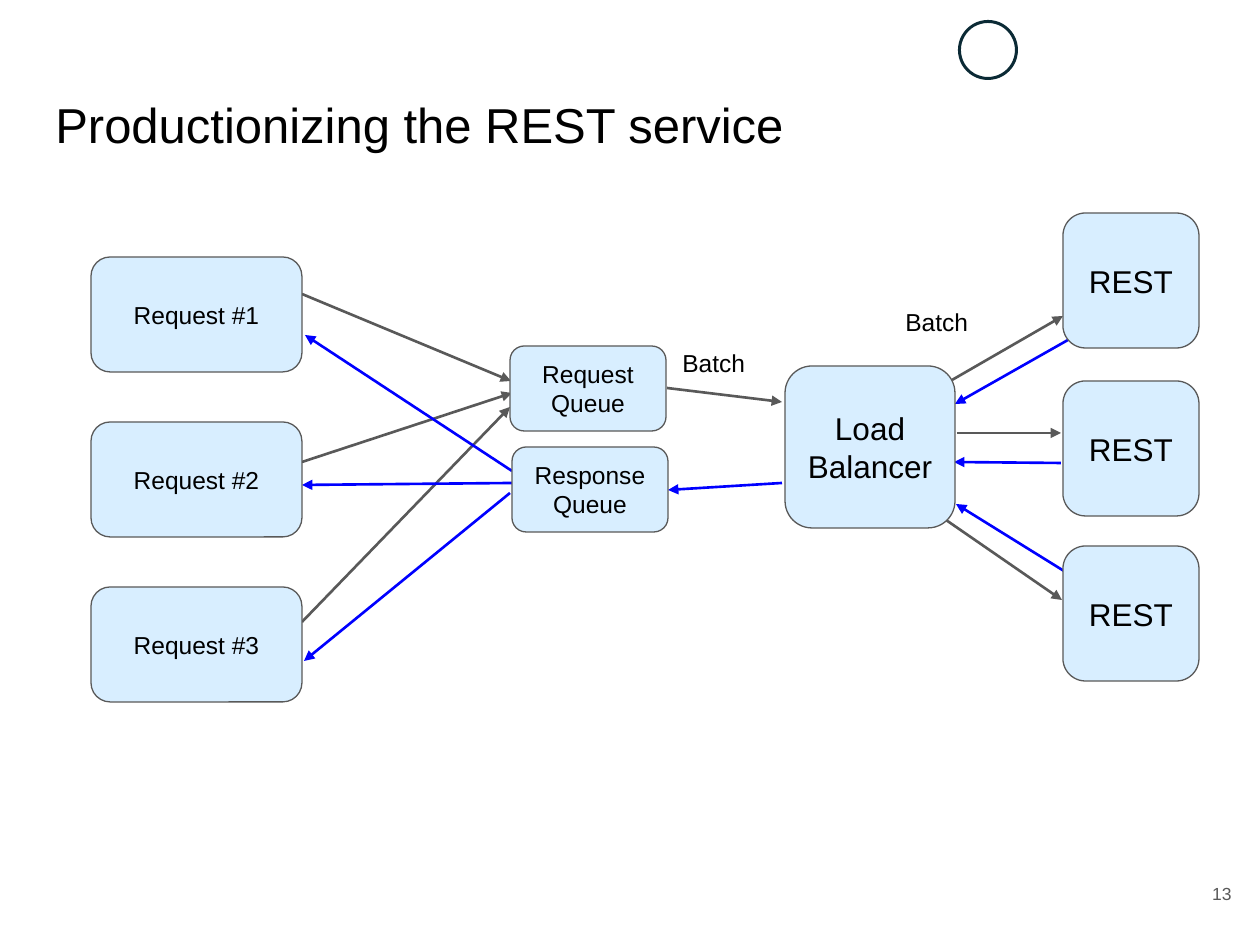
"""Build the slide about productionizing a REST service behind queues and a load balancer."""
import pptx
import pptx.dml.color
import pptx.enum.shapes
import pptx.enum.text
import pptx.oxml
import pptx.oxml.ns
import pptx.util
import lxml.etree

SCALE = 914400 / 126
COLORS = {"fill": "D8EEFF", "gray": "595959", "blue": "0000FF", "black": "000000", "mark": "0B2A35"}
SHAPES = pptx.enum.shapes.MSO_SHAPE
ALIGN = pptx.enum.text.PP_ALIGN
ANCHOR = pptx.enum.text.MSO_ANCHOR
qn = pptx.oxml.ns.qn


def emu(*lengths):
    return [pptx.util.Emu(round(length * SCALE)) for length in lengths]


def write(box, text, size=14, color="black", align=ALIGN.LEFT, anchor=ANCHOR.TOP):
    frame = box.text_frame
    frame.word_wrap = True
    frame.vertical_anchor = anchor
    frame.margin_left = frame.margin_right = pptx.util.Inches(0.1)
    frame.margin_top = frame.margin_bottom = pptx.util.Inches(0.1)
    para = frame.paragraphs[0]
    para.text = text
    para.alignment = align
    for span in para.runs:
        span.font.name = "Arial"
        span.font.size = pptx.util.Pt(size)
        span.font.color.rgb = pptx.dml.color.RGBColor.from_string(COLORS[color])
    for line_break in para._p.findall(qn("a:br")):
        lxml.etree.SubElement(line_break, qn("a:rPr"), sz=str(size * 100))


deck = pptx.Presentation()
deck.slide_width, deck.slide_height = emu(1260, 945)
page = deck.slides.add_slide(deck.slide_layouts[6])

emblem = page.shapes.add_shape(SHAPES.DONUT, *emu(958, 20, 60, 60))
emblem.adjustments[0] = 0.05
emblem.shadow.inherit = False
emblem.fill.solid()
emblem.fill.fore_color.rgb = pptx.dml.color.RGBColor.from_string(COLORS["mark"])
emblem.line.fill.background()

labels = [
    ("Productionizing the REST service", (43, 82, 1174, 105), {"size": 28}),
    ("13", (1168, 857, 76, 72),
     {"size": 10, "color": "gray", "align": ALIGN.RIGHT, "anchor": ANCHOR.MIDDLE}),
    ("Batch", (670, 335, 112, 52), {}),
    ("Batch", (893, 294, 112, 52), {}),
]
for text, place, style in labels:
    write(page.shapes.add_textbox(*emu(*place)), text, **style)

arrows = {
    "gray": [
        (302, 294, 511, 381), (302, 462, 512, 393), (302, 622, 510, 407),
        (667, 388, 782, 402), (952, 380, 1063, 316), (957, 433, 1061, 433),
        (946, 520, 1062, 600),
    ],
    "blue": [
        (782, 483, 668, 490), (512, 471, 305, 335), (513, 483, 302, 485),
        (510, 493, 304, 661), (1068, 340, 955, 404), (1061, 463, 954, 462),
        (1064, 571, 956, 504),
    ],
}
for color, routes in arrows.items():
    for route in routes:
        arrow = page.shapes.add_connector(
            pptx.enum.shapes.MSO_CONNECTOR.STRAIGHT, *emu(*route))
        arrow.line.width = pptx.util.Pt(1.5)
        arrow.line.color.rgb = pptx.dml.color.RGBColor.from_string(COLORS[color])
        lxml.etree.SubElement(arrow.line._get_or_add_ln(), qn("a:tailEnd"), type="triangle")
        lxml.etree.SubElement(arrow._element.spPr, qn("a:effectLst"))

nodes = [(f"Request #{row + 1}", (91, 257 + 165 * row, 211, 115), 14) for row in range(3)]
nodes += [
    ("Load\nBalancer", (785, 366, 170, 162), 18),
    ("Request\nQueue", (510, 346, 156, 85), 14),
    ("Response Queue", (512, 447, 156, 85), 14),
]
nodes += [("REST", (1063, top, 136, 135), 18) for top in (213, 381, 546)]
for text, place, size in nodes:
    node = page.shapes.add_shape(SHAPES.ROUNDED_RECTANGLE, *emu(*place))
    node.shadow.inherit = False
    node.fill.solid()
    node.fill.fore_color.rgb = pptx.dml.color.RGBColor.from_string(COLORS["fill"])
    node.line.color.rgb = pptx.dml.color.RGBColor.from_string(COLORS["gray"])
    node.line.width = pptx.util.Pt(0.75)
    write(node, text, size=size, align=ALIGN.CENTER, anchor=ANCHOR.MIDDLE)

deck.save("out.pptx")
